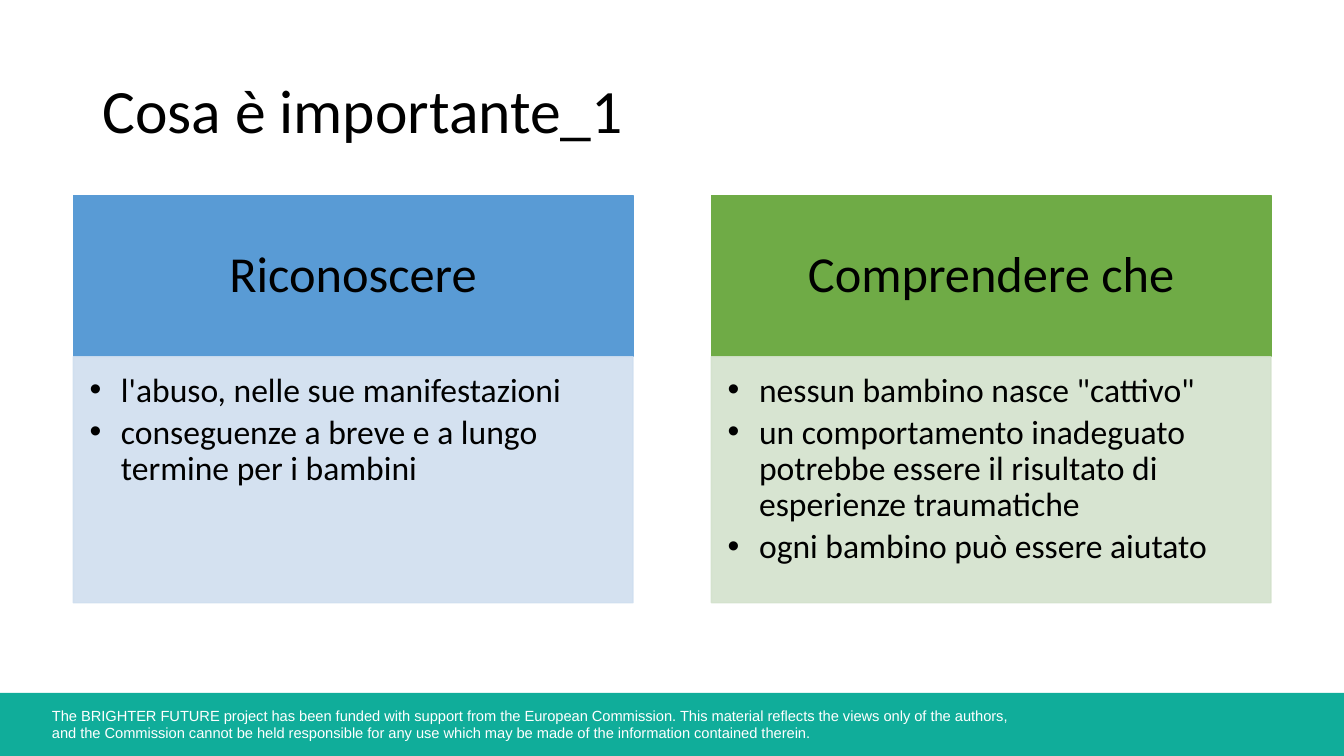
from lxml import etree
from pptx import Presentation
from pptx import util as u
from pptx.dml.color import RGBColor
from pptx.enum import shapes, text
from pptx.oxml import ns

COLORS = {
    "black": "000000",
    "white": "FFFFFF",
    "footer": "10AD9A",
    "blue": "599BD5",
    "blue_light": "CFDEEF",
    "green": "6FAB46",
    "green_light": "D3E1CC",
}
BODY_OPACITY = 89
COLUMN_WIDTH = 14.1
COLUMN_TOP = 4.93
HEADER_HEIGHT = 4.06
BODY_HEIGHT = 6.2

COLUMNS = [
    (1.85, "blue", "Riconoscere", [
        "l'abuso, nelle sue manifestazioni",
        "conseguenze a breve e a lungo termine per i bambini",
    ]),
    (17.93, "green", "Comprendere che", [
        'nessun bambino nasce "cattivo"',
        "un comportamento inadeguato potrebbe essere il risultato di esperienze traumatiche",
        "ogni bambino può essere aiutato",
    ]),
]
FOOTER_LINES = [
    "The BRIGHTER FUTURE project has been funded with support from the "
    "European Commission. This material reflects the views only of the authors,",
    "and the Commission cannot be held responsible for any use which may be "
    "made of the information contained therein.",
]


def rgb(name):
    return RGBColor.from_string(COLORS[name])


def add_rect(s, left, top, width, height, color, opacity=100, outline=True):
    sp = s.shapes.add_shape(shapes.MSO_SHAPE.RECTANGLE,
                            u.Cm(left), u.Cm(top), u.Cm(width), u.Cm(height))
    sp.shadow.inherit = False
    sp.fill.solid()
    sp.fill.fore_color.rgb = rgb(color)
    if outline:
        sp.line.color.rgb = rgb(color)
        sp.line.width = u.Pt(1)
    else:
        sp.line.fill.background()
    if opacity < 100:
        for clr in sp._element.spPr.iter(ns.qn("a:srgbClr")):
            etree.SubElement(clr, ns.qn("a:alpha"), val=str(opacity * 1000))
    return sp


def set_frame(sp, anchor, left, top, right, bottom):
    tf = sp.text_frame
    tf.word_wrap = True
    tf.vertical_anchor = anchor
    tf.margin_left, tf.margin_top = u.Cm(left), u.Cm(top)
    tf.margin_right, tf.margin_bottom = u.Cm(right), u.Cm(bottom)
    return tf


def add_run(p, words, size, color="black", font="Calibri"):
    r = p.add_run()
    r.text = words
    r.font.size = u.Pt(size)
    r.font.name = font
    r.font.color.rgb = rgb(color)


def add_bullet(p):
    pPr = p._p.get_or_add_pPr()
    pPr.set("marL", str(u.Cm(0.79)))
    pPr.set("indent", str(-u.Cm(0.79)))
    etree.SubElement(pPr, ns.qn("a:buFont"), typeface="Arial")
    etree.SubElement(pPr, ns.qn("a:buChar"), char="•")


def add_title(s, words):
    sp = s.shapes.add_textbox(u.Cm(2.33), u.Cm(1.01), u.Cm(29.21), u.Cm(3.68))
    tf = set_frame(sp, text.MSO_ANCHOR.MIDDLE, 0.25, 0.13, 0.25, 0.13)
    p = tf.paragraphs[0]
    p.line_spacing = 0.9
    add_run(p, words, 44)


def add_column(s, left, color, heading, items):
    # Heading block
    sp = add_rect(s, left, COLUMN_TOP, COLUMN_WIDTH, HEADER_HEIGHT, color)
    tf = set_frame(sp, text.MSO_ANCHOR.MIDDLE, 0.9, 0.52, 0.9, 0.52)
    p = tf.paragraphs[0]
    p.alignment = text.PP_ALIGN.CENTER
    p.line_spacing = 0.9
    add_run(p, heading, 36)

    # Bulleted block
    sp = add_rect(s, left, COLUMN_TOP + HEADER_HEIGHT, COLUMN_WIDTH, BODY_HEIGHT,
                  color + "_light", BODY_OPACITY)
    tf = set_frame(sp, text.MSO_ANCHOR.TOP, 0.41, 0.41, 0.56, 0.61)
    for i, item in enumerate(items):
        p = tf.add_paragraph() if i else tf.paragraphs[0]
        add_bullet(p)
        p.alignment = text.PP_ALIGN.LEFT
        p.line_spacing = 0.9
        if i:
            p.space_before = u.Pt(4.2)
        add_run(p, item, 24)


def add_footer(s, lines):
    add_rect(s, 0, 17.46, 33.87, 1.59, "footer", outline=False)
    sp = s.shapes.add_textbox(u.Cm(1.06), u.Cm(17.67), u.Cm(25.4), u.Cm(1.15))
    tf = set_frame(sp, text.MSO_ANCHOR.TOP, 0.25, 0.13, 0.25, 0.13)
    p = tf.paragraphs[0]
    for i, line in enumerate(lines):
        if i:
            p.add_line_break()
        add_run(p, line, 10.5, "white", "Arial")


def main():
    prs = Presentation()
    prs.slide_width, prs.slide_height = u.Cm(33.87), u.Cm(19.05)
    s = prs.slides.add_slide(prs.slide_layouts[6])
    add_footer(s, FOOTER_LINES)
    add_title(s, "Cosa è importante_1")
    for column in COLUMNS:
        add_column(s, *column)
    prs.save("out.pptx")


if __name__ == "__main__":
    main()
